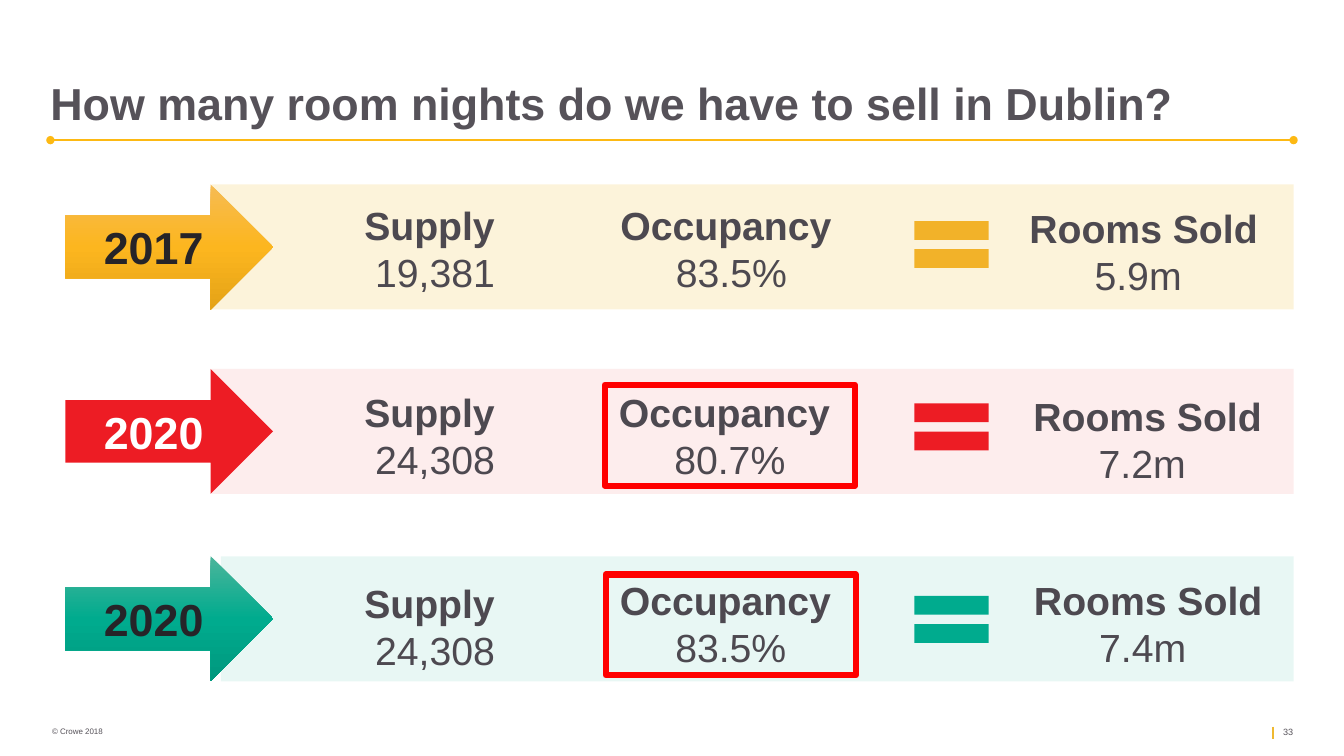
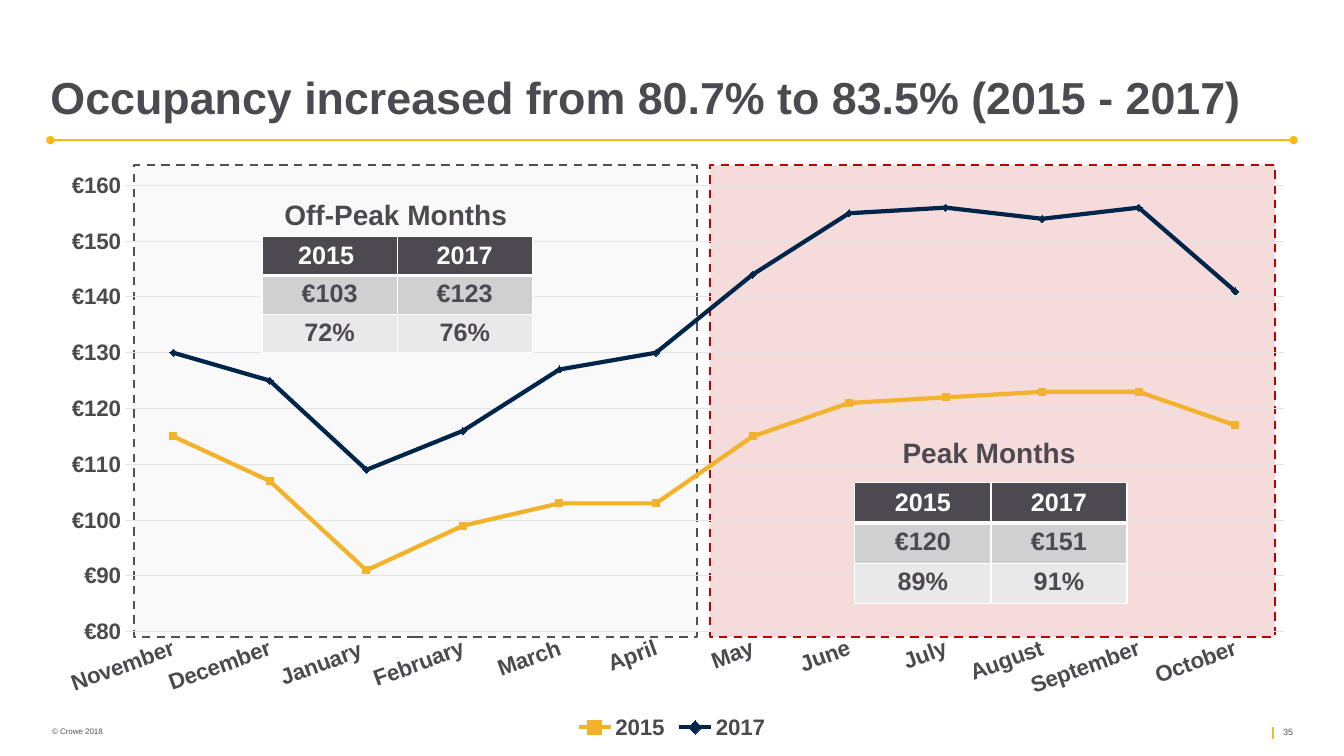
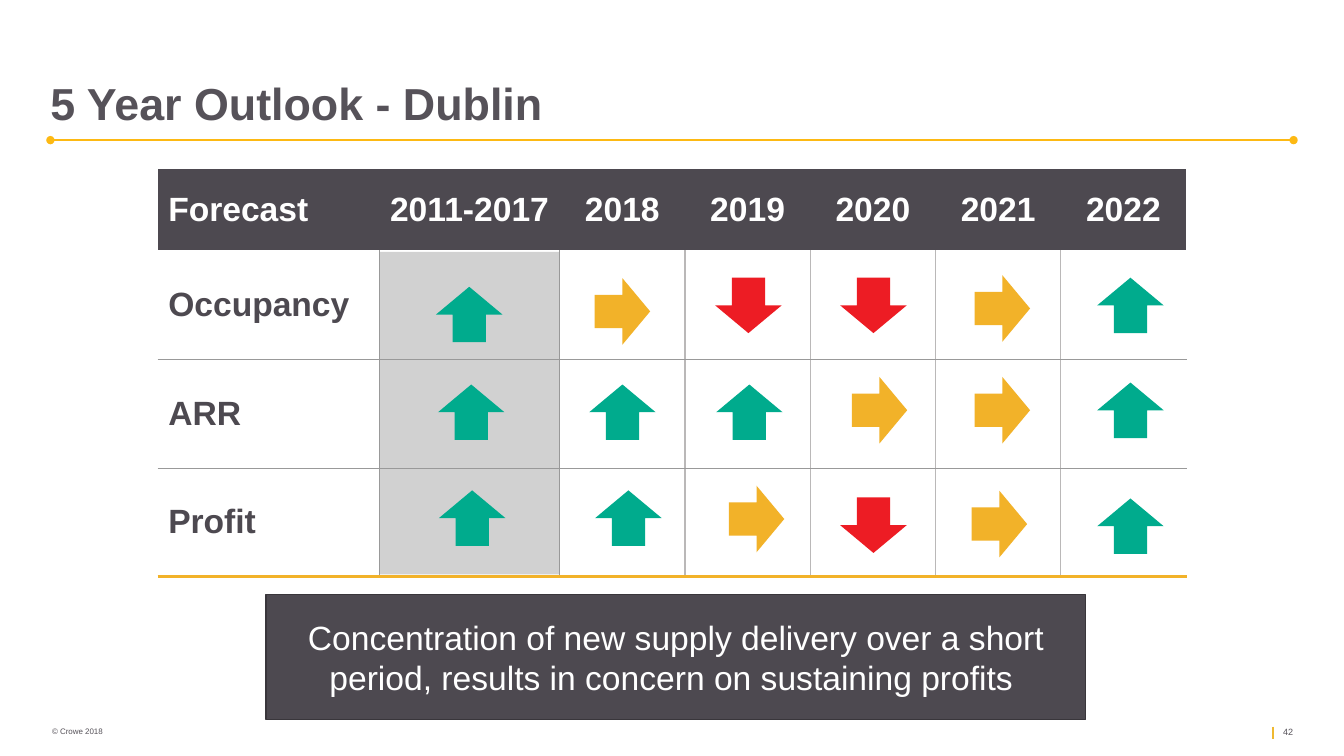
from dataclasses import dataclass

from lxml import etree
from pptx import Presentation
from pptx.chart.data import CategoryChartData
from pptx.dml.color import RGBColor
from pptx.enum.chart import XL_CHART_TYPE as Kind, XL_LEGEND_POSITION as Spot, XL_TICK_MARK as Tick
from pptx.enum.dml import MSO_LINE as Dash
from pptx.enum.shapes import MSO_CONNECTOR as Wire, MSO_SHAPE as Form
from pptx.enum.text import MSO_ANCHOR as Anchor, MSO_AUTO_SIZE as Fit, PP_ALIGN as Align
from pptx.oxml import parse_xml
from pptx.oxml.ns import nsdecls, qn
from pptx.util import Pt


@dataclass(frozen=True)
class Theme:
    font: str = "Arial"
    ink: str = "4D4950"
    soft: str = "565259"
    dark: str = "262428"
    white: str = "FFFFFF"
    rule: str = "FDB913"
    mark: str = "EFB931"
    gold: str = "F2B229"
    red: str = "ED1C24"
    green: str = "00AB8E"
    alert: str = "FF0000"
    peak: str = "C00000"
    navy: str = "00254A"
    grid: str = "E4E3E5"
    gray: str = "999999"
    pale: str = "BAB8B8"
    huge: float = 32
    big: float = 28
    mid: float = 24
    head: float = 20
    cell: float = 18
    axis: float = 16
    page: float = 6.5
    note: float = 5.7


T = Theme()
NO_GRID = "{2D5ABB26-0587-4C30-8999-92F81FD0307C}"


def rgb(tint):
    return RGBColor.from_string(tint)


def box(*lens):
    return [Pt(n) for n in lens]


def style(font, size, tint, bold=False):
    font.name, font.size, font.bold = T.font, Pt(size), bold
    font.color.rgb = rgb(tint)


def fade(shape, alpha):
    """Set the opacity of a solid fill, in percent."""
    tint = shape.fill._xPr.find(qn("a:solidFill"))[0]
    etree.SubElement(tint, qn("a:alpha")).set("val", str(alpha * 1000))


def blend(shape, tints):
    """Fill a shape from top to bottom with evenly spaced colours."""
    step = 100000 // (len(tints) - 1)
    stops = "".join(f'<a:gs pos="{i * step}"><a:srgbClr val="{c}"/></a:gs>'
                    for i, c in enumerate(tints))
    shape.fill.background()
    old = shape._element.spPr.find(qn("a:noFill"))
    old.getparent().replace(old, parse_xml(
        f'<a:gradFill {nsdecls("a")}><a:gsLst>{stops}</a:gsLst>'
        '<a:lin ang="5400000" scaled="0"/></a:gradFill>'))


def edge(cell, **sides):
    """Draw cell borders; each side is a colour and a width."""
    props = cell._tc.get_or_add_tcPr()
    for side in "LRTB":
        if side in sides:
            tint, width = sides[side]
            props.append(parse_xml(
                f'<a:ln{side} {nsdecls("a")} w="{Pt(width)}"><a:solidFill>'
                f'<a:srgbClr val="{tint}"/></a:solidFill></a:ln{side}>'))


class Deck:
    """Holds the presentation and the slide being drawn."""

    def __init__(self):
        self.file = Presentation()
        self.file.slide_width, self.file.slide_height = box(960, 540)

    def page(self, title, num, top=54.7, tint=T.soft):
        """Start a slide with its title, rule and footer."""
        self.slide = self.file.slides.add_slide(self.file.slide_layouts[5])
        self.shapes = self.slide.shapes
        name = self.shapes.title
        name.left, name.top, name.width, name.height = box(36, top, 888, 37.5)
        frame = name.text_frame
        frame.auto_size, frame.word_wrap = Fit.NONE, True
        frame.vertical_anchor = Anchor.TOP
        frame.margin_left = frame.margin_right = 0
        frame.margin_top = frame.margin_bottom = Pt(3.6)
        para = frame.paragraphs[0]
        para.line_spacing = 0.9
        self.run(para, title, T.huge, tint, True, Align.LEFT)
        self.line(909.4, 519.1, 909.4, 527.8, T.mark, 1.5)
        self.text((909.4, 515.5, 47.5, 15), [(str(num), False)], T.page, T.soft, Align.LEFT)
        self.text((30.2, 515.5, 190, 14.4), [("© Crowe 2018", False)], T.note, T.soft, Align.LEFT)
        self.line(36, 100.1, 924, 100.1, T.rule, 1, ends=True)

    def run(self, para, words, size, tint, bold=False, align=Align.CENTER):
        para.alignment = align
        run = para.add_run()
        run.text = words
        style(run.font, size, tint, bold)

    def text(self, area, lines, size, tint=T.ink, align=Align.CENTER):
        """Add a text box; each line is its words and whether it is bold."""
        frame = self.shapes.add_textbox(*box(*area)).text_frame
        frame.word_wrap = True
        for i, (words, bold) in enumerate(lines):
            para = frame.add_paragraph() if i else frame.paragraphs[0]
            self.run(para, words, size, tint, bold, align)

    def line(self, x1, y1, x2, y2, tint, width, ends=False):
        wire = self.shapes.add_connector(Wire.STRAIGHT, *box(x1, y1, x2, y2))
        wire.line.color.rgb, wire.line.width = rgb(tint), Pt(width)
        if ends:
            for tag in ("a:headEnd", "a:tailEnd"):
                etree.SubElement(wire.line._get_or_add_ln(), qn(tag)).set("type", "oval")
        etree.SubElement(wire._element.spPr, qn("a:effectLst"))

    def shape(self, form, area, fill=None, alpha=None, line=None, width=1, dash=None):
        shape = self.shapes.add_shape(form, *box(*area))
        shape.shadow.inherit = False
        if fill:
            shape.fill.solid()
            shape.fill.fore_color.rgb = rgb(fill)
        else:
            shape.fill.background()
        if alpha:
            fade(shape, alpha)
        if line:
            shape.line.color.rgb, shape.line.width = rgb(line), Pt(width)
            if dash:
                shape.line.dash_style = dash
        else:
            shape.line.fill.background()
        return shape

    def label(self, shape, words, size, tint, bold=False):
        frame = shape.text_frame
        frame.word_wrap, frame.vertical_anchor = True, Anchor.MIDDLE
        self.run(frame.paragraphs[0], words, size, tint, bold)

    def table(self, left, top, cols, rows):
        grid = self.shapes.add_table(
            len(rows), len(cols), *box(left, top, sum(cols), sum(rows))).table
        grid.first_row = grid.horz_banding = False
        grid._tbl.tblPr.find(qn("a:tableStyleId")).text = NO_GRID
        for part, sizes in ((grid.columns, cols), (grid.rows, rows)):
            for item, size in zip(part, sizes):
                if part is grid.columns:
                    item.width = Pt(size)
                else:
                    item.height = Pt(size)
        return grid

    def cell(self, cell, words, size, tint, fill, align=Align.CENTER, anchor=Anchor.MIDDLE):
        cell.vertical_anchor = anchor
        if fill:
            cell.fill.solid()
            cell.fill.fore_color.rgb = rgb(fill)
        else:
            cell.fill.background()
        if words:
            self.run(cell.text_frame.paragraphs[0], words, size, tint, True, align)

    def rates(self, left, top, wide, high, rows):
        """Add a small table of yearly room rate and occupancy."""
        grid = self.table(left, top, [wide] * 2, [high] * 3)
        thin, thick = (T.white, 1), (T.white, 3)
        for y, (row, fill) in enumerate(zip(rows, (T.ink, "D0D0D0", "E9E9E9"))):
            for x, words in enumerate(row):
                cell = grid.cell(y, x)
                cell.margin_top = cell.margin_bottom = Pt(3)
                edge(cell, L=thin, R=thin, T=thick if y == 1 else thin,
                     B=thin if y else thick)
                self.cell(cell, words, T.cell, T.ink if y else T.white, fill,
                          anchor=Anchor.TOP if y else Anchor.MIDDLE)

    def chart(self, area, cats, series, plot):
        """Add a line chart; series holds name, colour and values."""
        data = CategoryChartData()
        data.categories = cats
        for name, _, vals in series:
            data.add_series(name, vals)
        chart = self.shapes.add_chart(Kind.LINE, *box(*area), data).chart
        style(chart.font, 10, T.ink)
        chart.has_title, chart.has_legend = False, True
        chart.legend.position, chart.legend.include_in_layout = Spot.BOTTOM, False
        style(chart.legend.font, T.axis, T.ink, True)
        cat, val = chart.category_axis, chart.value_axis
        for axis in (cat, val):
            axis.major_tick_mark = axis.minor_tick_mark = Tick.NONE
            style(axis.tick_labels.font, T.axis, T.ink, True)
        cat._element.find(qn("c:txPr")).find(qn("a:bodyPr")).set("rot", "-1200000")
        val.minimum_scale, val.maximum_scale, val.major_unit = 80, 160, 10
        val.tick_labels.number_format = '"€"#,##0'
        val.tick_labels.number_format_is_linked = False
        val.format.line.fill.background()
        for line in (cat.format.line, val.major_gridlines.format.line):
            line.color.rgb, line.width = rgb(T.grid), Pt(0.75)
        chart.plots[0].vary_by_categories = False
        for item, (_, tint, _) in zip(chart.plots[0].series, series):
            item.smooth = False
            item.marker.style = None
            item.format.line.color.rgb, item.format.line.width = rgb(tint), Pt(3)
        self.place(chart, plot)

    def place(self, chart, plot):
        """Fix the inner plot area and clear the chart's background."""
        root = chart._chartSpace.chart
        zone = root.plotArea
        for old in zone.findall(qn("c:layout")):
            zone.remove(old)
        marks = "".join(f'<c:{k} val="{v}"/>' for k, v in
                        (("layoutTarget", "inner"), ("xMode", "edge"), ("yMode", "edge"),
                         *zip("xywh", plot)))
        zone.insert(0, parse_xml(f'<c:layout {nsdecls("c")}><c:manualLayout>{marks}'
                                 '</c:manualLayout></c:layout>'))
        clear = f'<c:spPr {nsdecls("c", "a")}><a:noFill/><a:ln><a:noFill/></a:ln></c:spPr>'
        root.addnext(parse_xml(clear))
        zone.append(parse_xml(clear))


def nights(deck):
    deck.page("How many room nights do we have to sell in Dublin?", 33)
    right, high = 924, 89.3
    # band top, left, opacity, colour, gradient, year colour, equal-sign top
    bands = (
        (131.8, 151.2, 17, T.gold, ("F6BB53", "FCB61F", "E5A317"), T.dark, 146.2),
        (263.5, 151.2, 8, T.red, None, T.white, 276.5),
        (397.4, 157.7, 9, T.green, ("4BB59B", T.green, "00987E"), T.dark, 414),
    )
    # words, value, centre and top of each figure
    facts = (
        (("Supply ", "19,381", 310.7, 140.4), ("Occupancy ", "83.5%", 522.4, 140.4),
         ("Rooms Sold", "5.9m ", 816.8, 142.6)),
        (("Supply ", "24,308", 310.7, 273.6), ("Occupancy ", "80.7%", 521.3, 273.6),
         ("Rooms Sold", "7.2m ", 819.7, 276.5)),
        (("Supply ", "24,308", 310.7, 410.4), ("Occupancy ", "83.5%", 522, 408.2),
         ("Rooms Sold", "7.4m ", 820.1, 408.2)),
    )
    for year, band, row in zip(("2017", "2020", "2020"), bands, facts):
        top, left, alpha, tint, tints, ink, sign = band
        fill = "F3BC29" if tint == T.gold else tint
        deck.shape(Form.RECTANGLE, (left, top, right - left, high), fill, alpha)
        arrow = deck.shape(Form.RIGHT_ARROW, (46.8, top, 148.3, high), tint)
        if tints:
            blend(arrow, tints)
        deck.label(arrow, year, T.huge, ink, True)
        for words, value, mid, y in row:
            deck.text((mid - 95, y, 190, 75), [(words, True), (value, False)], T.big)
        deck.shape(Form.MATH_EQUAL, (643.7, sign, 72, 56.9), tint)
    for left, top in ((432, 275), (432.7, 410.4)):
        deck.shape(Form.RECTANGLE, (left, top, 178.6, 72), line=T.alert, width=4.5)


def growth(deck):
    deck.page("Occupancy increased from 80.7% to 83.5% (2015 - 2017)", 35, 50.4, T.ink)
    for left, wide, fill, alpha, line in ((95.8, 401.8, "E7E6E6", 23, "514F4F"),
                                          (506.9, 403.9, T.peak, 14, T.peak)):
        deck.shape(Form.RECTANGLE, (left, 118.1, wide, 337), fill, alpha, line, 1.5, Dash.DASH)
    cats = ("November", "December", "January ", "February", "March", "April",
            "May", "June", "July", "August", "September", "October")
    deck.chart((36, 114.5, 888, 416.9), cats, (
        ("2015", T.gold, (115, 107, 91, 99, 103, 103, 115, 121, 122, 123, 123, 117)),
        ("2017", T.navy, (130, 125, 109, 116, 127, 130, 144, 155, 156, 154, 156, 141)),
    ), (0.06, 0.043, 0.932, 0.765))
    deck.rates(187.2, 169.2, 96.5, 27.4,
               (("2015 ", "2017"), ("€103", "€123"), ("72%", "76%")))
    deck.text((183.6, 137.5, 203.8, 31.7), [("Off-Peak Months ", True)], T.head)
    deck.rates(610.6, 344.9, 97.2, 28.8,
               (("2015", "2017"), ("€120", "€151"), ("89%", "91%")))
    deck.text((607, 307.4, 204.5, 31.7), [("Peak Months ", True)], T.head)


def outlook(deck):
    deck.page("5 Year Outlook - Dublin", 42)
    deck.shape(Form.RECTANGLE, (269.3, 180, 132.5, 230.4), T.gray, 45)
    heads = ("Forecast", "2011-2017", "2018", "2019", "2020", "2021", "2022")
    names = ("Occupancy", "ARR", "Profit")
    grid = deck.table(113, 121, [157.9, 128.9] + [89.5] * 5, [57.6] + [77.8] * 3)
    for x, words in enumerate(heads):
        deck.cell(grid.cell(0, x), words, T.mid, T.white, T.ink,
                  Align.CENTER if x else Align.LEFT)
    white, thin, pale = (T.white, 1), (T.gray, 0.5), (T.pale, 1)
    walls = [white, thin, thin] + [pale] * 4 + [white]
    for y, name in enumerate(names, 1):
        for x in range(len(heads)):
            cell = grid.cell(y, x)
            sides = {"L": walls[x], "R": walls[x + 1],
                     "B": (T.gold, 2.25) if y == len(names) else thin}
            if y > 1:
                sides["T"] = thin
            edge(cell, **sides)
            deck.cell(cell, "" if x else name, T.mid, T.ink,
                      None if x == 1 else T.white, Align.LEFT)
    trends = {"up": (270, "00AB8D"), "flat": (0, T.gold), "down": (90, T.red)}
    moves = (
        ("up", 315.4, 200.9), ("flat", 424.8, 198.7), ("down", 514.8, 194.4),
        ("down", 604.1, 194.4), ("flat", 696.2, 196.6), ("up", 787.7, 194.4),
        ("up", 316.8, 270.7), ("up", 424.8, 270.7), ("up", 515.5, 270.7),
        ("flat", 608.4, 269.3), ("flat", 696.2, 269.3), ("up", 787.7, 269.3),
        ("up", 317.5, 346.3), ("up", 429.1, 346.3), ("flat", 520.6, 347),
        ("down", 604.1, 351.4), ("flat", 694.1, 350.6), ("up", 787.7, 352.1),
    )
    for trend, left, top in moves:
        turn, tint = trends[trend]
        deck.shape(Form.RIGHT_ARROW, (left, top, 39.6, 47.5), tint).rotation = turn
    note = deck.shape(Form.ROUNDED_RECTANGLE, (190.1, 424.8, 585.4, 89.3), T.ink, line="39363B")
    note.adjustments[0] = 0
    deck.label(note, "Concentration of new supply delivery over a short period, "
               "results in concern on sustaining profits ", T.mid, T.white)


def main():
    deck = Deck()
    for draw in (nights, growth, outlook):
        draw(deck)
    deck.file.save("out.pptx")


if __name__ == "__main__":
    main()
